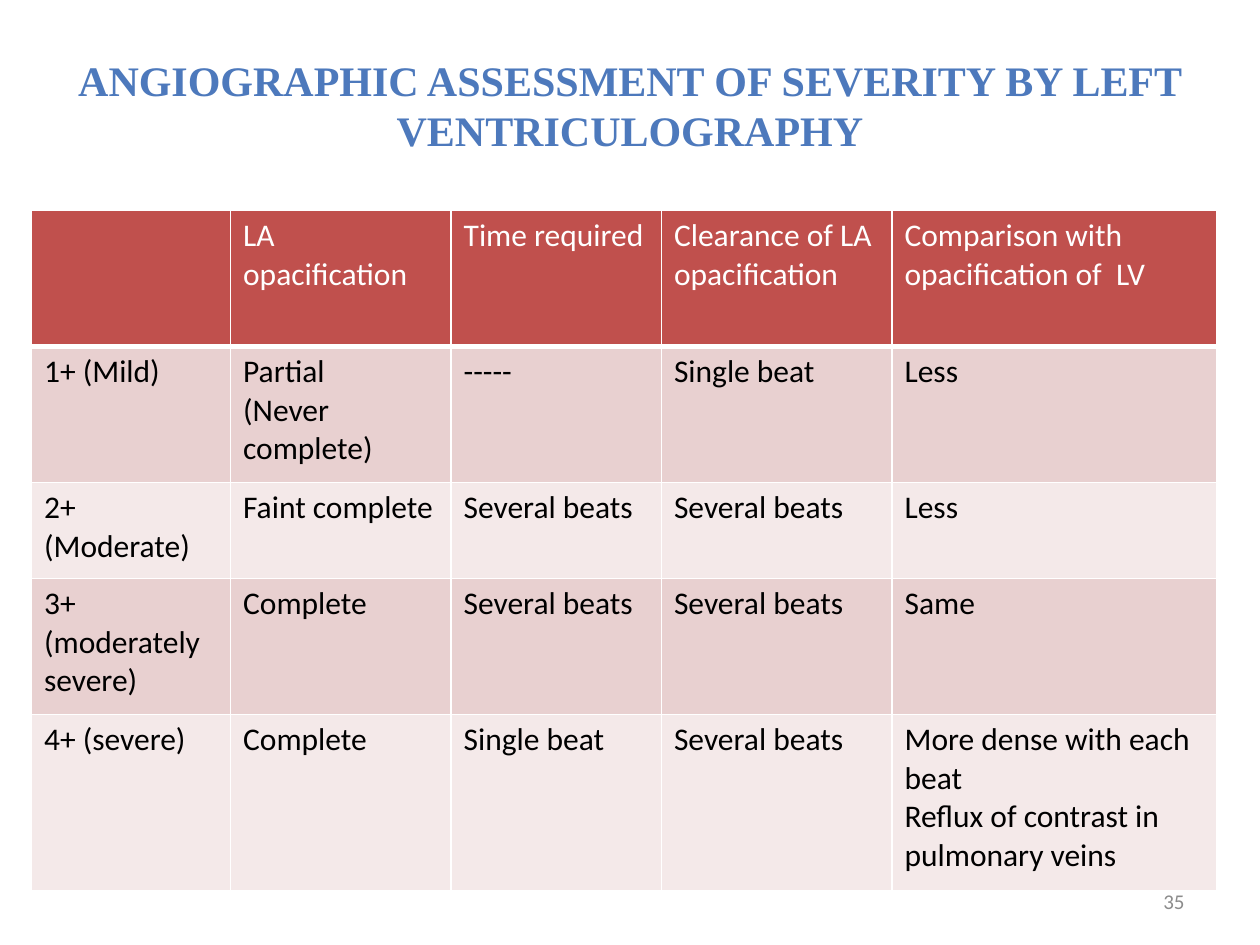
from dataclasses import dataclass

from lxml import etree
from pptx import Presentation
from pptx.dml.color import RGBColor
from pptx.enum.text import MSO_ANCHOR, PP_ALIGN
from pptx.oxml.ns import qn
from pptx.util import Inches, Pt

CENTER, RIGHT = PP_ALIGN.CENTER, PP_ALIGN.RIGHT
MIDDLE = MSO_ANCHOR.MIDDLE
BLANK_LAYOUT = 6


@dataclass(frozen=True)
class Theme:
    title_font: str = "Times New Roman"
    body_font: str = "Calibri"
    title_size: int = 24
    table_size: int = 18
    number_size: int = 12
    title_color: str = "4D79BC"
    number_color: str = "8C8C8C"
    header_fill: str = "C0504D"
    header_text: str = "FFFFFF"
    body_text: str = "000000"
    bands: tuple = ("E8D0D0", "F4E9E9")
    border: str = "FFFFFF"


class SlideBuilder:
    def __init__(self, slide, theme):
        self.slide = slide
        self.theme = theme

    def style(self, p, font, size, color, bold=False):
        p.font.name = font
        p.font.size = Pt(size)
        p.font.bold = bold
        p.font.color.rgb = RGBColor.from_string(color)

    def text(self, box, text, align, font, size, color, bold=False):
        sp = self.slide.shapes.add_textbox(*map(Inches, box))
        tf = sp.text_frame
        tf.word_wrap = True
        tf.vertical_anchor = MIDDLE
        p = tf.paragraphs[0]
        p.text = text
        p.alignment = align
        self.style(p, font, size, color, bold)

    def borders(self, cell, widths):
        tc_pr = cell._tc.get_or_add_tcPr()
        for side, width in widths.items():
            ln = etree.SubElement(tc_pr, qn(f"a:ln{side}"), w=str(Pt(width)))
            fill = etree.SubElement(ln, qn("a:solidFill"))
            etree.SubElement(fill, qn("a:srgbClr"), val=self.theme.border)

    def table(self, left, top, widths, heights, rows):
        t = self.theme
        frame = self.slide.shapes.add_table(
            len(rows), len(widths), Inches(left), Inches(top),
            Inches(sum(widths)), Inches(sum(heights)))
        table = frame.table
        for column, width in zip(table.columns, widths):
            column.width = Inches(width)
        for i, (row, height) in enumerate(zip(rows, heights)):
            table.rows[i].height = Inches(height)
            is_header = i == 0
            fill = t.header_fill if is_header else t.bands[(i - 1) % 2]
            color = t.header_text if is_header else t.body_text
            for j, text in enumerate(row):
                cell = table.cell(i, j)
                cell.text = text
                if is_header:
                    self.borders(cell, {"L": 1, "R": 1, "T": 1, "B": 3})
                cell.fill.solid()
                cell.fill.fore_color.rgb = RGBColor.from_string(fill)
                for p in cell.text_frame.paragraphs:
                    self.style(p, t.body_font, t.table_size, color)


def main():
    prs = Presentation()
    prs.slide_width, prs.slide_height = Inches(10), Inches(7.5)
    theme = Theme()
    s = SlideBuilder(prs.slides.add_slide(prs.slide_layouts[BLANK_LAYOUT]), theme)

    # Title
    s.text((0, 0.33, 10, 1),
           "ANGIOGRAPHIC ASSESSMENT OF SEVERITY BY LEFT VENTRICULOGRAPHY",
           CENTER, theme.title_font, theme.title_size, theme.title_color, bold=True)

    # Slide number
    s.text((7.17, 6.95, 2.33, 0.4), "35", RIGHT,
           theme.body_font, theme.number_size, theme.number_color)

    # Severity grades
    s.table(0.25, 1.67, (1.58, 1.75, 1.67, 1.83, 2.58), (1.08, 1.08, 0.76, 1.08, 1.4), [
        ("", "LA opacification", "Time required", "Clearance of LA opacification",
         "Comparison with opacification of  LV"),
        ("1+ (Mild)", "Partial\n(Never complete)", "-----", "Single beat", "Less"),
        ("2+ (Moderate)", "Faint complete", "Several beats", "Several beats", "Less"),
        ("3+ (moderately severe)", "Complete", "Several beats", "Several beats", "Same"),
        ("4+ (severe)", "Complete", "Single beat", "Several beats",
         "More dense with each beat\nReflux of contrast in pulmonary veins"),
    ])

    prs.save("out.pptx")


if __name__ == "__main__":
    main()
